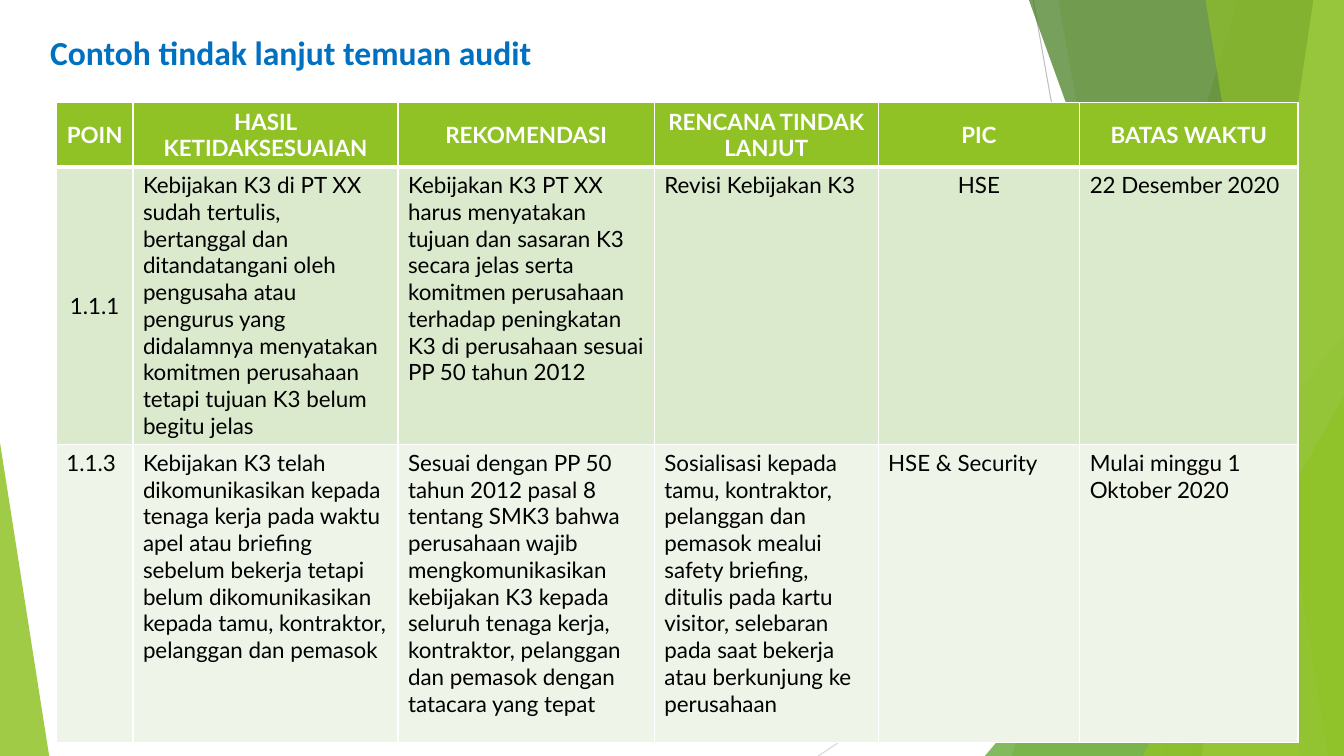
from dataclasses import dataclass

from lxml import etree
from pptx import Presentation
from pptx import util as u
from pptx.dml import color as dml
from pptx.enum import shapes, text
from pptx.oxml import ns

WIDTH, HEIGHT = 33.87, 19.05
GREEN, WHITE, BLACK = "90C226", "FFFFFF", "000000"
LEFT, CENTER = text.PP_ALIGN.LEFT, text.PP_ALIGN.CENTER


@dataclass
class Ray:
    start: tuple[float, float]
    end: tuple[float, float]
    color: str


@dataclass
class Band:
    """A facet that runs from its slanted left side to the right slide edge."""
    top_x: float
    bottom_x: float
    color: str
    alpha: int


@dataclass
class Corner:
    """A right-angled triangle standing on the bottom slide edge."""
    left: float
    top: float
    width: float
    apex: float
    color: str
    alpha: int


@dataclass
class Row:
    height: float
    fill: str
    texts: list[str]
    centered: tuple[int, ...] = ()
    middle: tuple[int, ...] = ()
    color: str = BLACK
    bold: bool = False
    top_border: float = 1
    bottom_border: float = 1


RAYS = [
    Ray((26.04, 0), (29.41, HEIGHT), "BFBFBF"),
    Ray((WIDTH, 10.24), (20.62, HEIGHT), "D9D9D9"),
]
FACETS = [
    Band(31.19, 25.5, GREEN, 30),
    Band(26.67, 30.05, GREEN, 20),
    Corner(24.82, 8.46, 9.05, 1, "54A021", 72),
    Band(25.93, 32.79, "3F7819", 70),
    Band(33.1, 30.28, "C0E474", 70),
    Band(30.38, 33.48, GREEN, 65),
    Corner(28.8, 9.98, 5.07, 1, GREEN, 80),
    Corner(0, 11.15, 1.24, 0, GREEN, 85),
]
COLUMN_WIDTHS = [1.93, 6.68, 6.46, 5.64, 5.08, 5.5]
ALL_COLUMNS = tuple(range(len(COLUMN_WIDTHS)))
ROWS = [
    Row(1.61, GREEN,
        ["POIN", "HASIL KETIDAKSESUAIAN", "REKOMENDASI", "RENCANA TINDAK LANJUT",
         "PIC", "BATAS WAKTU"],
        centered=ALL_COLUMNS, middle=ALL_COLUMNS, color=WHITE, bold=True, bottom_border=3),
    Row(6.98, "DBE9CD",
        ["1.1.1",
         "Kebijakan K3 di PT XX sudah tertulis, bertanggal dan ditandatangani oleh pengusaha "
         "atau pengurus yang didalamnya menyatakan komitmen perusahaan tetapi tujuan K3 belum "
         "begitu jelas",
         "Kebijakan K3 PT XX harus menyatakan tujuan dan sasaran K3 secara jelas serta komitmen "
         "perusahaan terhadap peningkatan K3 di perusahaan sesuai PP 50 tahun 2012",
         "Revisi Kebijakan K3", "HSE", "22 Desember 2020"],
        centered=(0, 4), middle=(0,), top_border=3),
    Row(7.52, "EEF4E8",
        ["1.1.3",
         "Kebijakan K3 telah dikomunikasikan kepada tenaga kerja pada waktu apel atau briefing "
         "sebelum bekerja tetapi belum dikomunikasikan kepada tamu, kontraktor, pelanggan dan "
         "pemasok",
         "Sesuai dengan PP 50 tahun 2012 pasal 8 tentang SMK3 bahwa perusahaan wajib "
         "mengkomunikasikan kebijakan K3 kepada seluruh tenaga kerja, kontraktor, pelanggan "
         "dan pemasok dengan tatacara yang tepat",
         "Sosialisasi kepada tamu, kontraktor, pelanggan dan pemasok mealui safety briefing, "
         "ditulis pada kartu visitor, selebaran pada saat bekerja atau berkunjung ke perusahaan",
         "HSE & Security", "Mulai minggu 1 Oktober 2020"]),
]


def rgb(value: str) -> dml.RGBColor:
    return dml.RGBColor.from_string(value)


def write(frame, content: str, *, size: float, font: str, color: str,
          bold: bool = False, align=LEFT) -> None:
    paragraph = frame.paragraphs[0]
    paragraph.alignment = align
    run = paragraph.add_run()
    run.text = content
    run.font.size = u.Pt(size)
    run.font.name = font
    run.font.bold = bold
    run.font.color.rgb = rgb(color)


def draw_ray(slide, ray: Ray) -> None:
    points = [u.Cm(value) for value in ray.start + ray.end]
    connector = slide.shapes.add_connector(shapes.MSO_CONNECTOR.STRAIGHT, *points)
    connector.line.color.rgb = rgb(ray.color)
    connector.line.width = u.Pt(0.75)
    etree.SubElement(connector._element.spPr, ns.qn("a:effectLst"))


def draw_facet(slide, facet: Band | Corner) -> None:
    if isinstance(facet, Band):
        builder = slide.shapes.build_freeform(u.Cm(facet.top_x), 0)
        builder.add_line_segments(
            [(u.Cm(x), u.Cm(y)) for x, y in
             [(WIDTH, 0), (WIDTH, HEIGHT), (facet.bottom_x, HEIGHT)]], close=True)
        shape = builder.convert_to_shape()
    else:
        shape = slide.shapes.add_shape(
            shapes.MSO_SHAPE.ISOSCELES_TRIANGLE, u.Cm(facet.left), u.Cm(facet.top),
            u.Cm(facet.width), u.Cm(HEIGHT - facet.top))
        shape.adjustments[0] = facet.apex
    shape.shadow.inherit = False
    shape.line.fill.background()
    shape.fill.solid()
    shape.fill.fore_color.rgb = rgb(facet.color)
    color = shape._element.spPr.find(".//" + ns.qn("a:srgbClr"))
    etree.SubElement(color, ns.qn("a:alpha"), val=str(facet.alpha * 1000))


def add_borders(cell, top: float, bottom: float) -> None:
    properties = cell._tc.get_or_add_tcPr()
    for tag, width in (("a:lnL", 1), ("a:lnR", 1), ("a:lnT", top), ("a:lnB", bottom)):
        line = etree.SubElement(properties, ns.qn(tag), w=str(u.Pt(width)))
        fill = etree.SubElement(line, ns.qn("a:solidFill"))
        etree.SubElement(fill, ns.qn("a:srgbClr"), val=WHITE)


def draw_table(slide, left: float, top: float) -> None:
    table = slide.shapes.add_table(
        len(ROWS), len(COLUMN_WIDTHS), u.Cm(left), u.Cm(top),
        u.Cm(sum(COLUMN_WIDTHS)), u.Cm(sum(row.height for row in ROWS))).table
    for column, width in zip(table.columns, COLUMN_WIDTHS):
        column.width = u.Cm(width)
    for row_index, row in enumerate(ROWS):
        table.rows[row_index].height = u.Cm(row.height)
        for index, content in enumerate(row.texts):
            cell = table.cell(row_index, index)
            add_borders(cell, row.top_border, row.bottom_border)
            cell.fill.solid()
            cell.fill.fore_color.rgb = rgb(row.fill)
            if index in row.middle:
                cell.vertical_anchor = text.MSO_ANCHOR.MIDDLE
            write(cell.text_frame, content, size=16, font="Lato", color=row.color,
                  bold=row.bold, align=CENTER if index in row.centered else LEFT)


def draw_title(slide) -> None:
    frame = slide.shapes.add_textbox(u.Cm(0.94), u.Cm(0.69), u.Cm(12.78), u.Cm(1.27)).text_frame
    frame.word_wrap = False
    frame.auto_size = text.MSO_AUTO_SIZE.SHAPE_TO_FIT_TEXT
    write(frame, "Contoh tindak lanjut temuan audit", size=24, font="Calibri",
          color="0070C0", bold=True, align=CENTER)


def main() -> None:
    presentation = Presentation()
    presentation.slide_width, presentation.slide_height = u.Cm(WIDTH), u.Cm(HEIGHT)
    slide = presentation.slides.add_slide(presentation.slide_layouts[6])

    # Background facets
    for ray in RAYS:
        draw_ray(slide, ray)
    for facet in FACETS:
        draw_facet(slide, facet)

    # Audit findings and title
    draw_table(slide, 1.42, 2.59)
    draw_title(slide)

    presentation.save("out.pptx")


if __name__ == "__main__":
    main()
